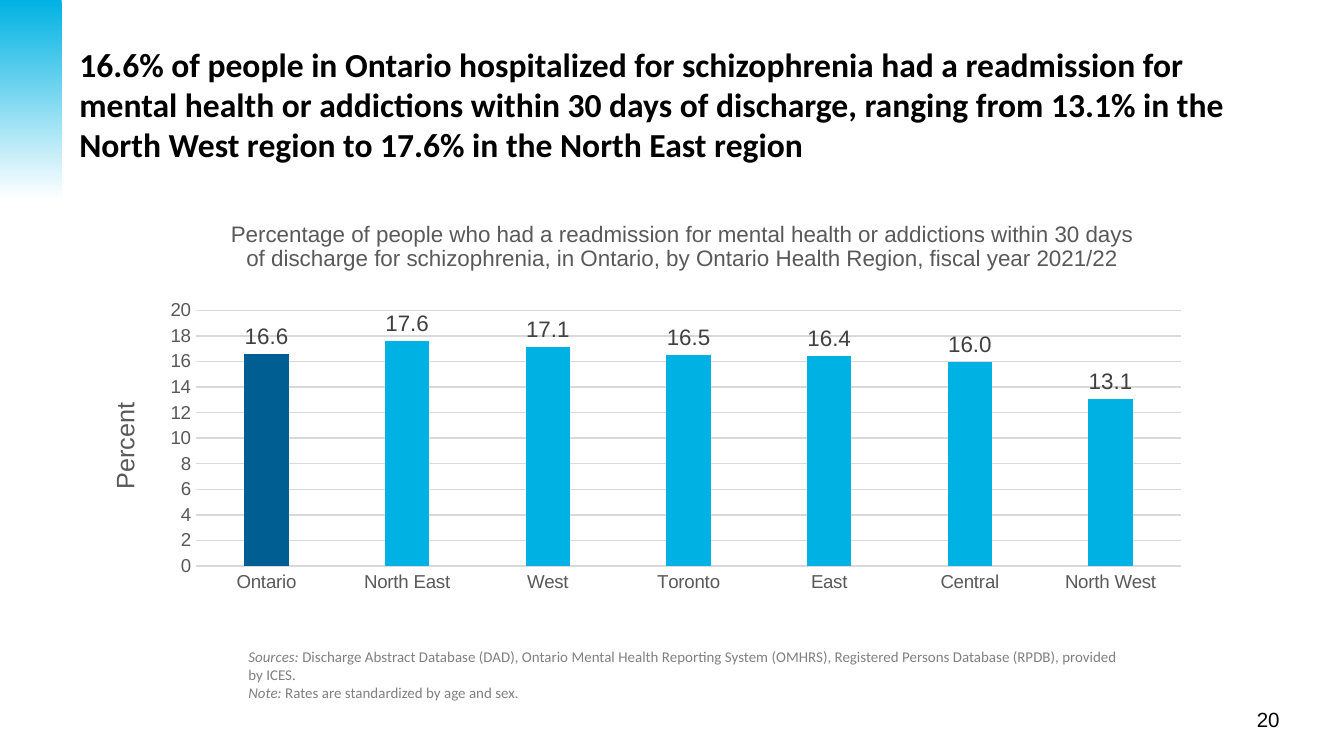
from lxml import etree
from pptx import Presentation
from pptx.chart.data import CategoryChartData
from pptx.dml.color import RGBColor
from pptx.enum.chart import XL_CHART_TYPE, XL_LABEL_POSITION, XL_TICK_MARK
from pptx.enum.shapes import MSO_SHAPE
from pptx.enum.text import MSO_ANCHOR, MSO_AUTO_SIZE, PP_ALIGN
from pptx.oxml import parse_xml
from pptx.oxml.ns import qn
from pptx.util import Inches, Pt

COLUMN = XL_CHART_TYPE.COLUMN_CLUSTERED
OUTSIDE = XL_LABEL_POSITION.OUTSIDE_END
NO_TICK = XL_TICK_MARK.NONE
RECT = MSO_SHAPE.RECTANGLE
MIDDLE = MSO_ANCHOR.MIDDLE
FIXED = MSO_AUTO_SIZE.NONE
LEFT, RIGHT = PP_ALIGN.LEFT, PP_ALIGN.RIGHT

BLUE, NAVY, WHITE, BLACK = "00B2E3", "005E92", "FFFFFF", "000000"
GREY, DARK, PALE, SOFT = "595959", "404040", "D9D9D9", "808080"
CHART_NS = "http://schemas.openxmlformats.org/drawingml/2006/chart"

HEADING = (
    "16.6% of people in Ontario hospitalized for schizophrenia had a "
    "readmission for mental health or addictions within 30 days of discharge, "
    "ranging from 13.1% in the North West region to 17.6% in the North East region"
)
CAPTION = (
    "Percentage of people who had a readmission for mental health or addictions "
    "within 30 days of discharge for schizophrenia, in Ontario, by Ontario Health "
    "Region, fiscal year 2021/22"
)
RATES = {
    "Ontario": 16.6,
    "North East": 17.6,
    "West": 17.1,
    "Toronto": 16.5,
    "East": 16.4,
    "Central": 16.0,
    "North West": 13.1,
}
NOTES = [
    ("Sources: ", "Discharge Abstract Database (DAD), Ontario Mental Health "
     "Reporting System (OMHRS), Registered Persons Database (RPDB), provided by ICES."),
    ("Note: ", "Rates are standardized by age and sex."),
]


def paint(color, code):
    color.rgb = RGBColor.from_string(code)


def style(font, size, code, name="Arial", bold=False, italic=False):
    font.size = Pt(size)
    font.name = name
    font.bold = bold
    font.italic = italic
    paint(font.color, code)


def rule(line, code):
    line.width = Pt(0.75)
    paint(line.color, code)


def add_band(slide, box):
    band = slide.shapes.add_shape(RECT, *map(Inches, box))
    band.shadow.inherit = False
    band._element.remove(band._element.find(qn("p:style")))
    band.line.fill.background()
    band.fill.gradient()
    band.fill.gradient_angle = 270
    for stop, code, place in zip(band.fill.gradient_stops, (BLUE, WHITE), (0, 1)):
        paint(stop.color, code)
        stop.position = place


def add_title(slide, box):
    title = slide.shapes.title
    title.left, title.top, title.width, title.height = map(Inches, box)
    frame = title.text_frame
    frame.text = HEADING
    frame.word_wrap = True
    frame.auto_size = FIXED
    frame.vertical_anchor = MIDDLE
    frame.paragraphs[0].alignment = LEFT
    style(frame.paragraphs[0].runs[0].font, 18, BLACK, "Calibri", bold=True)


def label(owner, text, size):
    frame = owner.text_frame
    frame.text = text
    style(frame.paragraphs[0].runs[0].font, size, GREY)


def fix_plot(chart, box):
    area = chart.plots[0]._element.getparent()
    old = area.find(f"{{{CHART_NS}}}layout")
    if old is not None:
        area.remove(old)
    layout = parse_xml(
        f'<c:layout xmlns:c="{CHART_NS}"><c:manualLayout>'
        '<c:layoutTarget val="inner"/><c:xMode val="edge"/><c:yMode val="edge"/>'
        '</c:manualLayout></c:layout>'
    )
    for key, value in zip("xywh", box):
        etree.SubElement(layout[0], f"{{{CHART_NS}}}{key}", val=str(value))
    area.insert(0, layout)


def add_rates(slide, box):
    data = CategoryChartData(number_format="0.0")
    data.categories = list(RATES)
    data.add_series("Series 1", list(RATES.values()))
    chart = slide.shapes.add_chart(COLUMN, *map(Inches, box), data).chart
    style(chart.font, 10, BLACK)
    chart.has_legend = False
    label(chart.chart_title, CAPTION, 12)
    fix_plot(chart, (0.08, 0.25, 0.85, 0.58))

    for axis in (chart.category_axis, chart.value_axis):
        axis.major_tick_mark = axis.minor_tick_mark = NO_TICK
        style(axis.tick_labels.font, 10, GREY)
    rule(chart.category_axis.format.line, PALE)
    scale = chart.value_axis
    scale.minimum_scale, scale.maximum_scale, scale.major_unit = 0, 20, 2
    scale.tick_labels.number_format = "0"
    scale.tick_labels.number_format_is_linked = False
    scale.format.line.fill.background()
    rule(scale.major_gridlines.format.line, PALE)
    label(scale.axis_title, "Percent", 13.5)

    plot = chart.plots[0]
    plot.vary_by_categories = False
    plot.gap_width, plot.overlap = 219, -27
    bars = plot.series[0]
    for part, code in ((bars, BLUE), (bars.points[0], NAVY)):
        part.format.fill.solid()
        paint(part.format.fill.fore_color, code)
    tags = bars.data_labels
    tags.show_value = True
    tags.position = OUTSIDE
    tags.number_format = "0.0"
    tags.number_format_is_linked = False
    style(tags.font, 12, DARK)


def add_notes(slide, box):
    frame = slide.shapes.add_textbox(*map(Inches, box)).text_frame
    frame.word_wrap = True
    for index, (head, body) in enumerate(NOTES):
        para = frame.add_paragraph() if index else frame.paragraphs[0]
        for text, italic in ((head, True), (body, False)):
            run = para.add_run()
            run.text = text
            style(run.font, 8, SOFT, "Calibri", italic=italic)


def add_number(slide, box):
    frame = slide.shapes.add_textbox(*map(Inches, box)).text_frame
    frame.word_wrap = True
    frame.text = "20"
    frame.paragraphs[0].alignment = RIGHT
    style(frame.paragraphs[0].runs[0].font, 11, BLACK)


def main():
    deck = Presentation()
    deck.slide_width = Inches(10)
    deck.slide_height = deck.slide_width * 9 // 16
    slide = deck.slides.add_slide(deck.slide_layouts[5])
    add_number(slide, (8.45, 5.21, 1.17, 0.29))
    add_band(slide, (0, 0, 0.46, 1.48))
    add_title(slide, (0.49, 0.26, 9.02, 1.03))
    add_rates(slide, (0.77, 1.49, 8.62, 3.28))
    add_notes(slide, (1.75, 4.77, 6.76, 0.5))
    deck.save("out.pptx")


if __name__ == "__main__":
    main()
